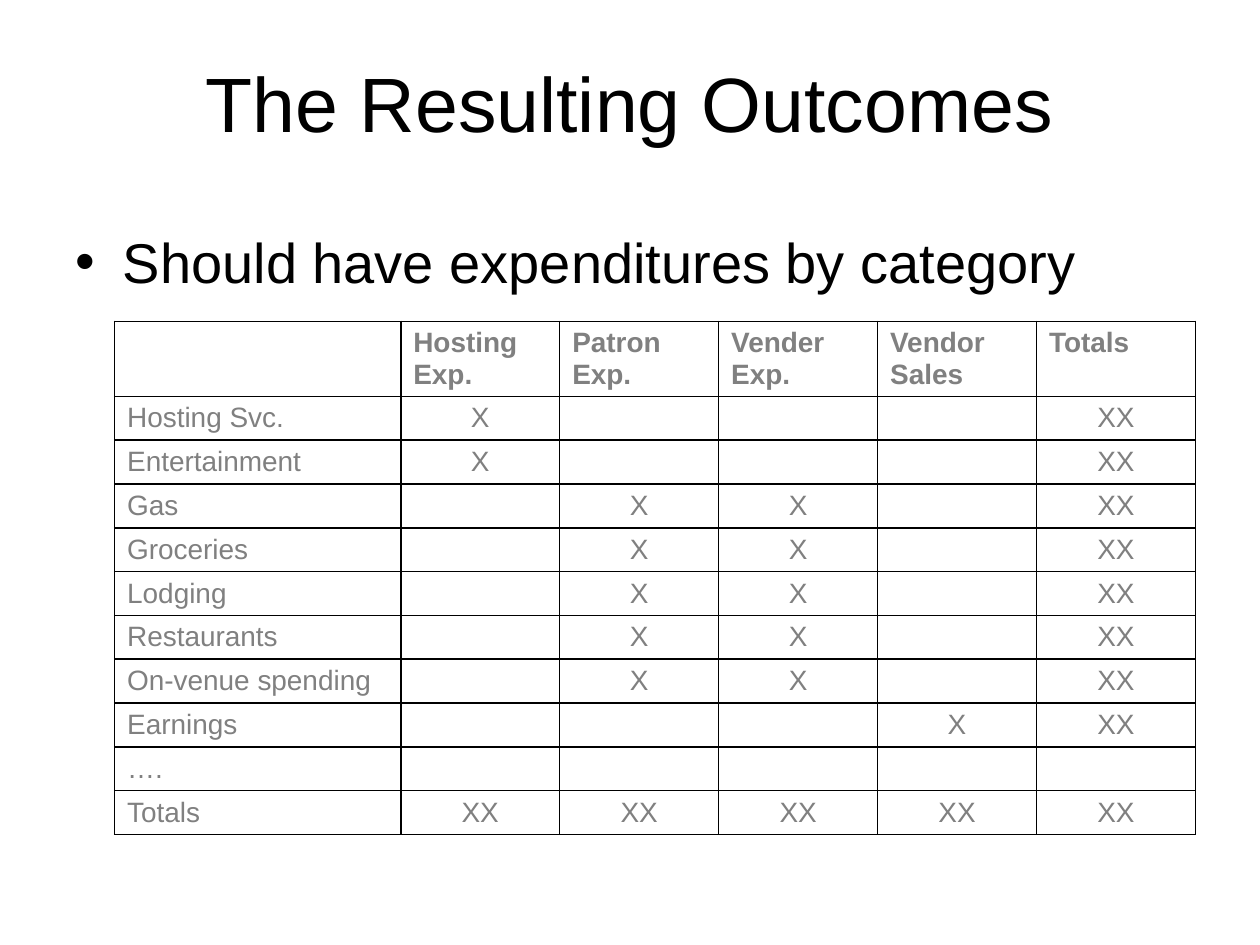
from lxml.etree import SubElement
from pptx import Presentation
from pptx.dml.color import RGBColor
from pptx.enum.text import MSO_ANCHOR, PP_ALIGN
from pptx.oxml.ns import qn
from pptx.util import Cm, Pt

COLORS = {"ink": "000000", "muted": "808080"}
HEADERS = ["", "Hosting Exp.", "Patron Exp.", "Vender Exp.", "Vendor Sales", "Totals"]
ROWS = [
    ["Hosting Svc.", "X", "", "", "", "XX"],
    ["Entertainment", "X", "", "", "", "XX"],
    *[[name, "", "X", "X", "", "XX"]
      for name in ("Gas", "Groceries", "Lodging", "Restaurants", "On-venue spending")],
    ["Earnings", "", "", "", "X", "XX"],
    ["….", "", "", "", "", ""],
    ["Totals", "XX", "XX", "XX", "XX", "XX"],
]


def style_font(font, size, color, bold=False):
    """Apply the slide's typeface with a size, colour and weight."""
    font.name = "Arial"
    font.size = Pt(size)
    font.bold = bold
    font.color.rgb = RGBColor.from_string(COLORS[color])


def fill_placeholder(shape, box, text, size):
    """Move a placeholder into its box and set its text."""
    shape.left, shape.top, shape.width, shape.height = map(Cm, box)
    shape.text_frame.text = text
    para = shape.text_frame.paragraphs[0]
    style_font(para.font, size, "ink")
    return para


def add_title(page, box):
    """Place the centred slide title."""
    para = fill_placeholder(page.shapes.title, box, "The Resulting Outcomes", 44)
    para.alignment = PP_ALIGN.CENTER
    page.shapes.title.text_frame.vertical_anchor = MSO_ANCHOR.MIDDLE


def add_bullets(page, box):
    """Place the bulleted statement."""
    fill_placeholder(page.placeholders[1], box, "Should have expenditures by category", 32)


def add_borders(cell):
    """Draw a thin line on every side of a cell."""
    properties = cell._tc.get_or_add_tcPr()
    for index, side in enumerate(("lnL", "lnR", "lnT", "lnB")):
        line = properties.makeelement(qn(f"a:{side}"), {"w": str(Pt(1))})
        fill = SubElement(line, qn("a:solidFill"))
        SubElement(fill, qn("a:srgbClr"), val=COLORS["ink"])
        properties.insert(index, line)


def fill_cell(cell, text, is_header, is_label):
    """Write and format one table cell."""
    cell.text = text
    cell.fill.background()
    add_borders(cell)
    para = cell.text_frame.paragraphs[0]
    style_font(para.font, 16, "muted", is_header)
    if not is_header:
        cell.margin_top = cell.margin_bottom = 0
        cell.vertical_anchor = MSO_ANCHOR.MIDDLE
        para.alignment = PP_ALIGN.LEFT if is_label else PP_ALIGN.CENTER


def add_expenditure_table(page, box):
    """Place the table of spending categories against spenders."""
    left, top, width, height = box
    label_width, header_height = 5.77, 1.51
    grid = [HEADERS, *ROWS]
    table = page.shapes.add_table(len(grid), len(HEADERS), *map(Cm, box)).table
    for index, column in enumerate(table.columns):
        column.width = Cm((width - label_width) / (len(HEADERS) - 1) if index else label_width)
    for index, row in enumerate(table.rows):
        row.height = Cm((height - header_height) / len(ROWS) if index else header_height)
        for position, text in enumerate(grid[index]):
            fill_cell(table.cell(index, position), text, index == 0, position == 0)


def main():
    """Build and save the slide."""
    deck = Presentation()
    deck.slide_width, deck.slide_height = Cm(25.4), Cm(19.05)
    page = deck.slides.add_slide(deck.slide_layouts[1])
    add_title(page, (1.27, 0.43, 22.86, 3.25))
    add_bullets(page, (1.27, 4.45, 22.86, 12.57))
    add_expenditure_table(page, (2.31, 6.48, 21.79, 10.34))
    deck.save("out.pptx")


if __name__ == "__main__":
    main()
